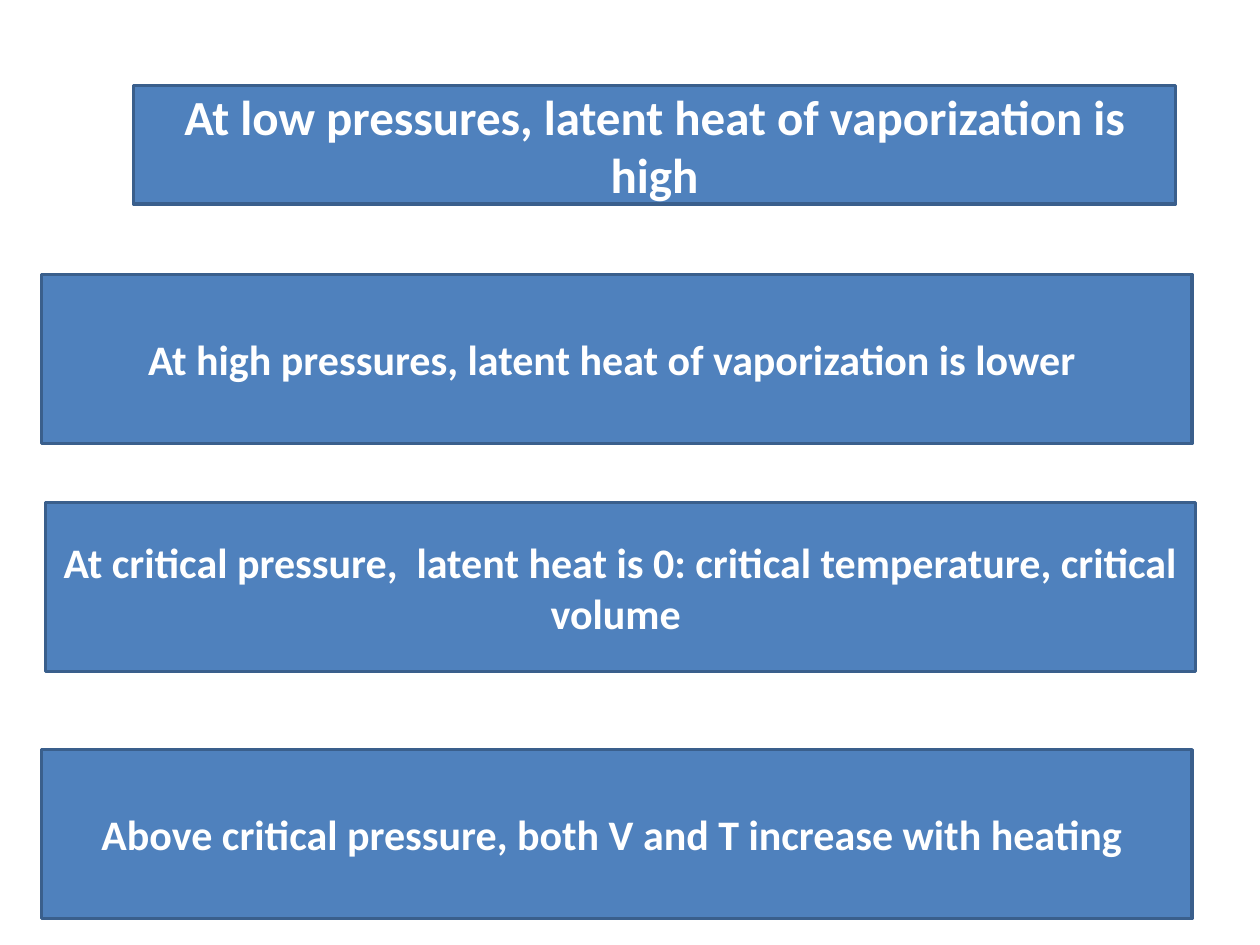
from pptx import Presentation
from pptx.dml.color import RGBColor
from pptx.enum.shapes import MSO_SHAPE
from pptx.enum.text import MSO_ANCHOR, PP_ALIGN
from pptx.util import Inches, Pt

RECT = MSO_SHAPE.RECTANGLE
MIDDLE = MSO_ANCHOR.MIDDLE
CENTER = PP_ALIGN.CENTER

FONT = "Calibri"
FILL, BORDER, TEXT = "4F81BD", "3A5F8C", "FFFFFF"

# text, (left, top, width, height) in inches, font size in points
STATEMENTS = [
    ("At low pressures, latent heat of vaporization is high",
     (1.06, 0.68, 8.27, 0.94), 28),
    ("At high pressures, latent heat of vaporization is lower ",
     (0.33, 2.18, 9.13, 1.34), 24),
    ("At critical pressure,  latent heat is 0: critical temperature, critical volume ",
     (0.36, 3.99, 9.13, 1.34), 24),
    ("Above critical pressure, both V and T increase with heating ",
     (0.33, 5.95, 9.13, 1.34), 24),
]


def rgb(value):
    return RGBColor.from_string(value)


def add_statement(slide, text, box, size):
    sp = slide.shapes.add_shape(RECT, *map(Inches, box))
    sp.shadow.inherit = False
    sp.fill.solid()
    sp.fill.fore_color.rgb = rgb(FILL)
    sp.line.color.rgb = rgb(BORDER)
    sp.line.width = Pt(2)

    tf = sp.text_frame
    tf.word_wrap = True
    tf.vertical_anchor = MIDDLE
    tf.text = text
    p = tf.paragraphs[0]
    p.alignment = CENTER
    font = p.runs[0].font
    font.name = FONT
    font.size = Pt(size)
    font.bold = True
    font.color.rgb = rgb(TEXT)


def main():
    prs = Presentation()
    prs.slide_width, prs.slide_height = Inches(10), Inches(7.5)
    blank = prs.slide_layouts[6]
    slide = prs.slides.add_slide(blank)
    for text, box, size in STATEMENTS:
        add_statement(slide, text, box, size)
    prs.save("out.pptx")


if __name__ == "__main__":
    main()
